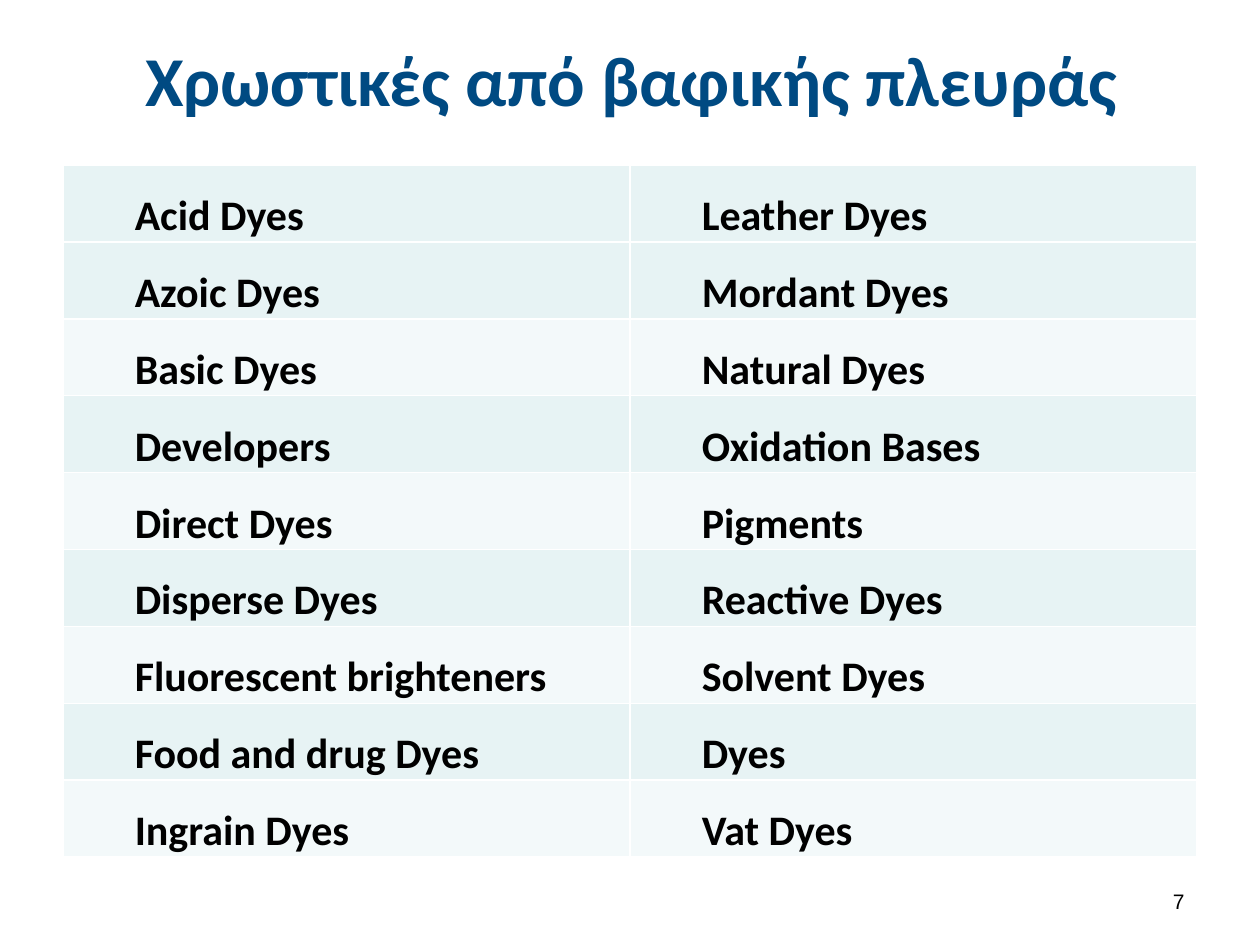
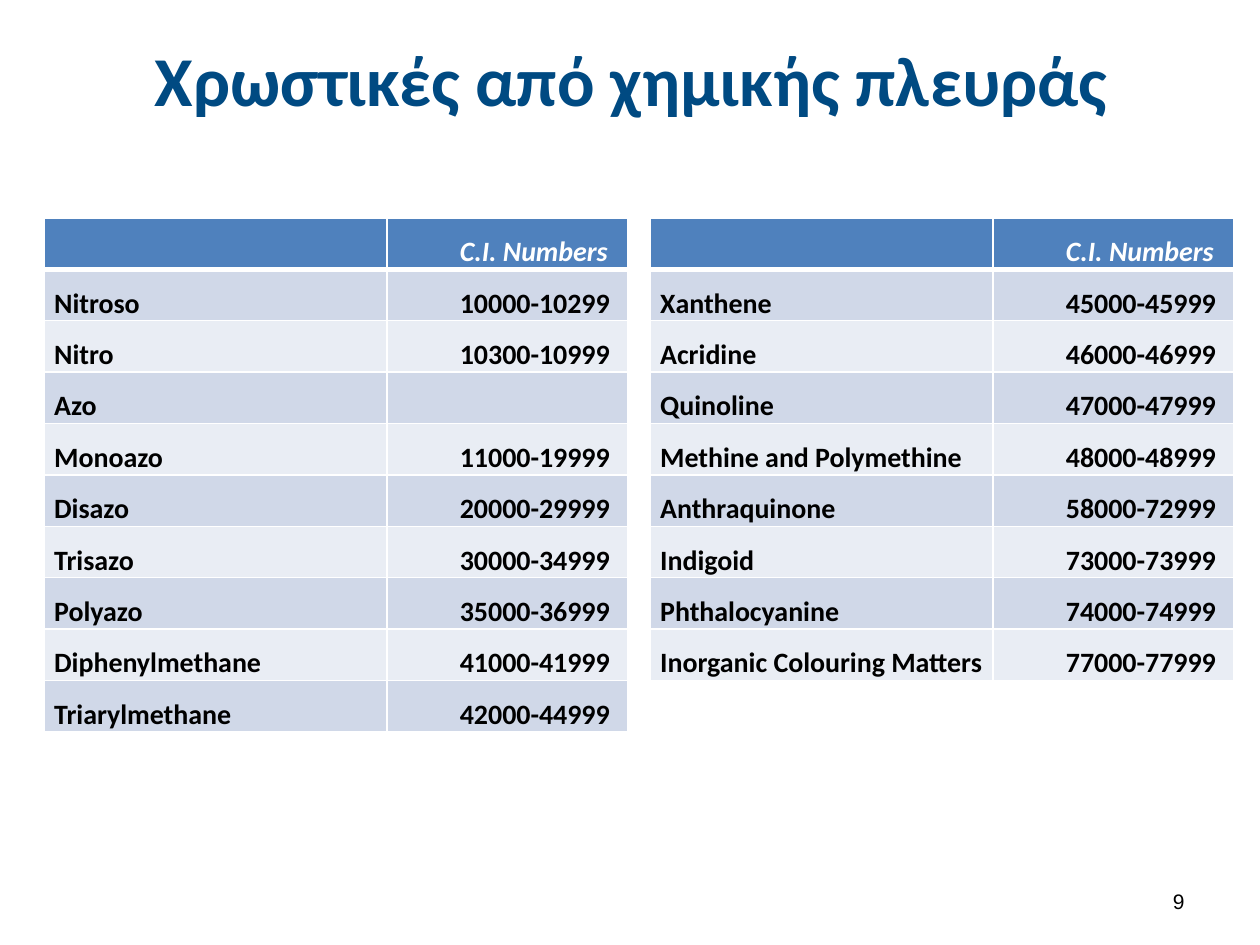
from lxml import etree
from pptx import Presentation
from pptx.dml.color import RGBColor
from pptx.enum import text
from pptx.oxml.ns import qn
from pptx.util import Inches, Pt

TITLE_BLUE, BLACK, WHITE = "004A82", "000000", "FFFFFF"
INDENT = 0.5

DYES = [
    ("Acid Dyes", "Leather Dyes"),
    ("Azoic Dyes", "Mordant Dyes"),
    ("Basic Dyes", "Natural Dyes"),
    ("Developers", "Oxidation Bases"),
    ("Direct Dyes", "Pigments"),
    ("Disperse Dyes", "Reactive Dyes"),
    ("Fluorescent brighteners", "Solvent Dyes"),
    ("Food and drug Dyes", "Dyes"),
    ("Ingrain Dyes", "Vat Dyes"),
]
INDEX_HEADER = ("", "C.I. Numbers")
INDEX_LEFT = [
    INDEX_HEADER,
    ("Nitroso", "10000-10299"),
    ("Nitro", "10300-10999"),
    ("Azo", ""),
    ("Monoazo", "11000-19999"),
    ("Disazo", "20000-29999"),
    ("Trisazo", "30000-34999"),
    ("Polyazo", "35000-36999"),
    ("Diphenylmethane", "41000-41999"),
    ("Triarylmethane", "42000-44999"),
]
INDEX_RIGHT = [
    INDEX_HEADER,
    ("Xanthene", "45000-45999"),
    ("Acridine", "46000-46999"),
    ("Quinoline", "47000-47999"),
    ("Methine and Polymethine", "48000-48999"),
    ("Anthraquinone", "58000-72999"),
    ("Indigoid", "73000-73999"),
    ("Phthalocyanine", "74000-74999"),
    ("Inorganic Colouring Matters", "77000-77999"),
]

DYE_STYLE = {
    "columns": (4.5, 4.5), "row_heights": (0.6, 0.6), "indents": (INDENT, INDENT),
    "size": 24, "margin": 0.07, "align": text.PP_ALIGN.JUSTIFY,
    "fills": ("E7F3F4", "E7F3F4", "F3F9FA"),
    "header_color": BLACK, "header_italic": False, "header_rule": 1,
}
INDEX_STYLE = {
    "columns": (2.72, 1.91), "row_heights": (0.28, 0.35), "indents": (0, INDENT),
    "size": 16, "margin": 0.08, "align": text.PP_ALIGN.LEFT,
    "fills": ("4F81BD", "D0D8E8", "E9EDF4"),
    "header_color": WHITE, "header_italic": True, "header_rule": 3,
}

SLIDES = [
    ("Χρωστικές από βαφικής πλευράς", "7", [(0.5, 1.31, DYES, DYE_STYLE)]),
    ("Χρωστικές από χημικής πλευράς", "9", [
        (0.35, 1.73, INDEX_LEFT, INDEX_STYLE),
        (5.16, 1.73, INDEX_RIGHT, INDEX_STYLE),
    ]),
]


def color(value):
    return RGBColor.from_string(value)


def set_font(paragraph, name, size, value, bold=False, italic=False):
    font = paragraph.font
    font.name, font.size = name, Pt(size)
    font.bold, font.italic = bold, italic
    font.color.rgb = color(value)


def place(box, left, top, width, height):
    box.left, box.top = Inches(left), Inches(top)
    box.width, box.height = Inches(width), Inches(height)


def add_borders(cell, top, bottom):
    properties = cell._tc.get_or_add_tcPr()
    for side, width in (("L", 1), ("R", 1), ("T", top), ("B", bottom)):
        line = etree.SubElement(properties, qn(f"a:ln{side}"), w=str(Pt(width)))
        fill = etree.SubElement(line, qn("a:solidFill"))
        etree.SubElement(fill, qn("a:srgbClr"), val=WHITE)


def fill_cell(cell, words, row, indent, style):
    header = row == 0
    rule = style["header_rule"]
    add_borders(cell, rule if row == 1 else 1, rule if header else 1)
    cell.fill.solid()
    band = 0 if header else 1 if row % 2 else 2
    cell.fill.fore_color.rgb = color(style["fills"][band])
    cell.margin_left = cell.margin_right = Inches(style["margin"])
    cell.margin_top = cell.margin_bottom = 0
    cell.text = words
    paragraph = cell.text_frame.paragraphs[0]
    paragraph.alignment = style["align"]
    paragraph.line_spacing = 1.5
    paragraph._p.get_or_add_pPr().set("marL", str(Inches(indent)))
    set_font(paragraph, "Calibri", style["size"],
             style["header_color"] if header else BLACK,
             bold=True, italic=header and style["header_italic"])


def add_dye_table(page, left, top, rows, style):
    columns = style["columns"]
    first_height, other_height = style["row_heights"]
    height = first_height + other_height * (len(rows) - 1)
    table = page.shapes.add_table(len(rows), len(columns), Inches(left), Inches(top),
                                  Inches(sum(columns)), Inches(height)).table
    for column, width in zip(table.columns, columns):
        column.width = Inches(width)
    for row, entries in enumerate(rows):
        table.rows[row].height = Inches(other_height if row else first_height)
        for column, words in enumerate(entries):
            fill_cell(table.cell(row, column), words, row, style["indents"][column], style)


def add_title(page, words):
    title = page.shapes.title
    place(title, 0.51, 0.13, 9, 0.99)
    title.text_frame.text = words
    title.text_frame.vertical_anchor = text.MSO_ANCHOR.MIDDLE
    paragraph = title.text_frame.paragraphs[0]
    paragraph.alignment = text.PP_ALIGN.CENTER
    set_font(paragraph, "Calibri", 40, TITLE_BLUE, bold=True)


def add_page_number(page, number):
    box = page.shapes.add_textbox(Inches(7.17), Inches(6.95), Inches(2.33), Inches(0.4))
    frame = box.text_frame
    frame.word_wrap = True
    frame.vertical_anchor = text.MSO_ANCHOR.MIDDLE
    frame.text = number
    paragraph = frame.paragraphs[0]
    paragraph.alignment = text.PP_ALIGN.RIGHT
    set_font(paragraph, "Arial", 12, BLACK)


def main():
    deck = Presentation()
    deck.slide_width, deck.slide_height = Inches(10), Inches(7.5)
    title_only = deck.slide_layouts.get_by_name("Title Only")
    for title, number, tables in SLIDES:
        page = deck.slides.add_slide(title_only)
        add_title(page, title)
        for table in tables:
            add_dye_table(page, *table)
        add_page_number(page, number)
    deck.save("out.pptx")


if __name__ == "__main__":
    main()
